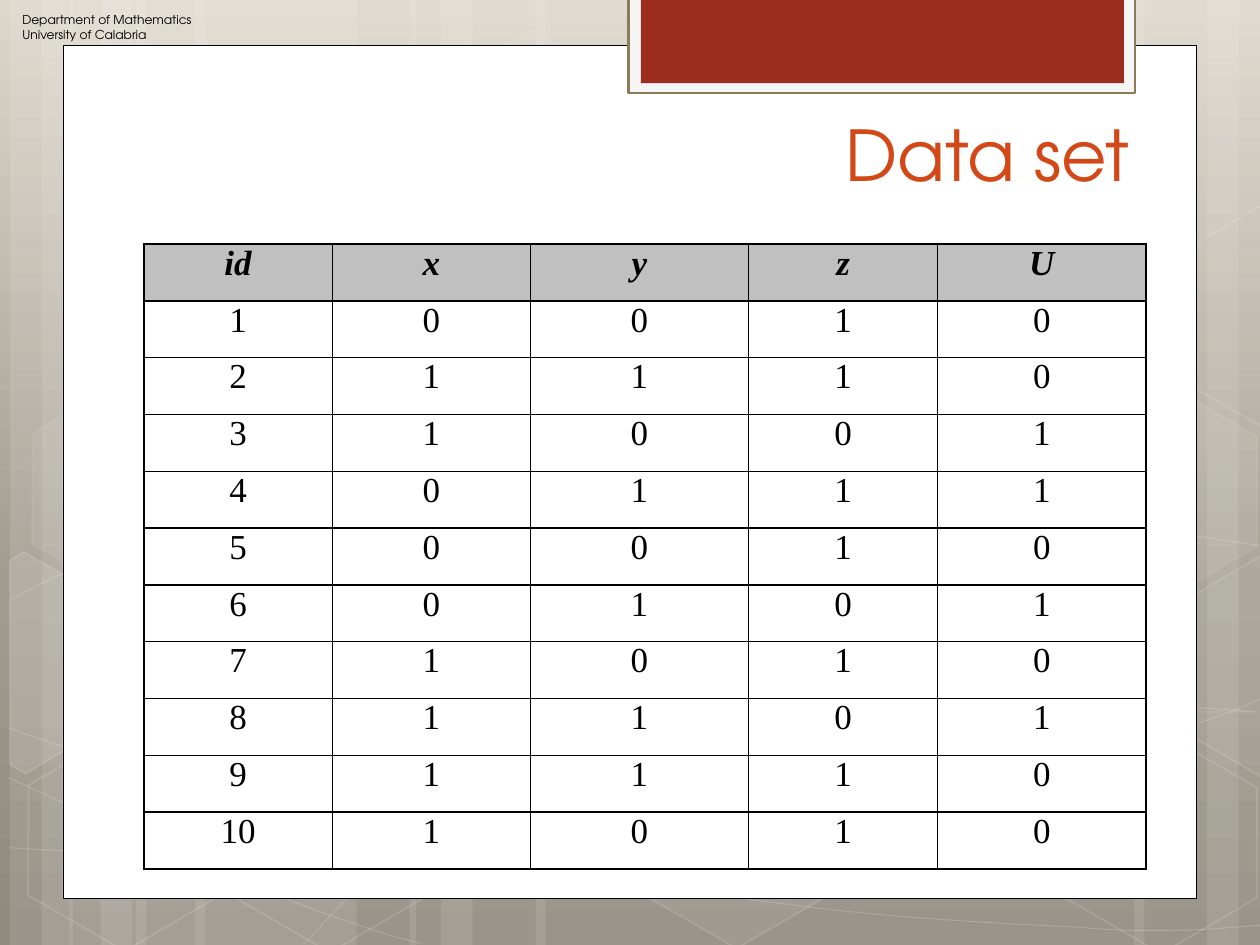
"""Build the data set slide: hexagon backdrop, white card and observation table."""
import math
from dataclasses import dataclass
from typing import NamedTuple, Optional

from lxml import etree
from pptx import Presentation
from pptx import util as u
from pptx.dml.color import RGBColor
from pptx.enum import shapes, text
from pptx.oxml import ns


@dataclass(frozen=True)
class Theme:
    white: str = "FFFFFF"
    black: str = "000000"
    frame: str = "F5F5F5"
    frame_line: str = "8B7B57"
    tab: str = "9B2D1F"
    title: str = "D34817"
    header: str = "C0C0C0"
    backdrop: tuple = ((0, "DDD7CB"), (62, "A29C90"), (100, "8F8A7D"))
    sans: str = "TeX Gyre Adventor"
    serif: str = "Times New Roman"
    title_pt: int = 40
    table_pt: int = 20
    label_pt: int = 7


class Paint(NamedTuple):
    color: str
    alpha: int = 100
    width: float = 1


class Box(NamedTuple):
    left: float
    top: float
    width: float
    height: float


class Stripe(NamedTuple):
    left: float
    width: float
    rotation: int = 0


class Hexagon(NamedTuple):
    left: float
    top: float
    fill: Optional[int]
    line: int


class CutHexagon(NamedTuple):
    points: list
    fill: Optional[int] = None


T = Theme()
PAGE_W, PAGE_H = 25.4, 19.05
TILT = 30
STRIPES = [
    Stripe(2.74, 4.45), Stripe(0.2, 1.27), Stripe(0.84, 2.11), Stripe(3.94, 4.45),
    Stripe(1.4, 1.27), Stripe(2.03, 2.11), Stripe(18.62, 4.45, 180), Stripe(24.33, 1.27, 180),
    Stripe(22.86, 2.11, 180), Stripe(10.8, 7.82), Stripe(8.26, 1.27), Stripe(8.89, 2.11),
]
CURVES = [
    [(0.18, 17.09), (1.55, 17.17), (2.92, 17.25), (4.83, 17.22), (6.73, 17.2), (9.09, 17.15),
     (11.63, 16.89), (14.17, 16.64), (17.78, 16.15), (20.12, 15.67), (22.43, 15.19),
     (24.82, 14.43), (25.58, 14)],
    [(0.18, 12.12), (0.91, 11.71), (1.65, 11.33), (3.07, 10.95), (4.52, 10.57), (6.58, 10.01),
     (8.81, 9.83), (11.07, 9.65), (13.82, 9.63), (16.61, 9.83), (19.41, 10.03),
     (24.05, 10.82), (25.58, 11.02)],
    [(0.15, 15.67), (3.23, 17.07), (6.27, 18.47), (8.48, 19.02)],
    [(0.18, 14.68), (0.97, 14.96), (1.78, 15.24), (3.25, 15.65), (4.72, 16.03), (6.93, 16.66),
     (9.07, 17.09), (11.18, 17.53), (13.84, 17.98), (15.95, 18.24), (18.06, 18.52),
     (20.32, 18.62), (21.67, 18.69), (22.99, 18.8), (23.34, 18.75), (24, 18.75),
     (24.66, 18.72), (25.12, 18.67), (25.58, 18.64)],
    [(6.15, 19.02), (6.6, 18.52), (7.06, 18.01), (7.67, 17.55), (8.28, 17.09), (9.14, 16.59),
     (9.86, 16.23), (10.57, 15.88), (11, 15.72), (11.94, 15.47), (12.85, 15.21),
     (14.55, 14.86), (15.44, 14.68), (16.36, 14.5), (16.48, 14.5), (17.27, 14.45),
     (18.06, 14.38), (19.3, 14.3), (20.17, 14.27), (21.06, 14.25), (22.5, 14.27),
     (22.5, 14.27), (22.5, 14.27), (24.21, 14.27), (24.21, 14.27), (24.66, 14.3),
     (25.1, 14.33), (25.32, 14.35), (25.55, 14.38)],
]
HEXAGONS = [
    Hexagon(8.48, 0.91, 4, 8), Hexagon(12.62, 14.96, 6, 12),
    CutHexagon([(0.2, 11.3), (0.48, 11.13), (2.44, 12.24), (2.41, 14.48), (0.51, 15.6),
                (0.2, 15.42)], 10),
    Hexagon(0.28, 15.01, None, 12), Hexagon(0.36, 7.92, 7, 8), Hexagon(4.42, 15.04, None, 12),
    Hexagon(19.13, 11.51, 10, 12), Hexagon(21.18, 15.06, None, 12), Hexagon(21.18, 7.98, 7, 8),
    CutHexagon([(23.52, 12.32), (25.43, 11.2), (25.63, 11.33), (25.63, 15.57), (25.45, 15.67),
                (23.52, 14.55)], 4),
    CutHexagon([(23.52, 5.26), (25.43, 4.14), (25.65, 4.27), (25.63, 8.51), (25.45, 8.61),
                (23.52, 7.49)]),
]
COLUMNS = {"id": 3.8, "x": 3.99, "y": 4.4, "z": 3.81, "U": 4.2}
OBSERVATIONS = ["0010", "1110", "1001", "0111", "0010", "0101", "1010", "1101", "1110", "1010"]


def apply_paint(fmt, paint: Optional[Paint], colors) -> None:
    """Fill a format solidly, or empty it, and set its opacity."""
    if paint is None:
        fmt.background()
        return
    fmt.solid()
    fmt.fore_color.rgb = RGBColor.from_string(paint.color)
    if paint.alpha < 100:
        etree.SubElement(colors()[0], ns.qn("a:alpha"), val=str(paint.alpha * 1000))


def style_shape(sp, fill: Optional[Paint], line: Optional[Paint] = None) -> None:
    """Give a shape its fill and line, without a shadow."""
    sp.shadow.inherit = False
    props = sp._element.spPr
    apply_paint(sp.fill, fill, lambda: props.xpath("./a:solidFill/a:srgbClr"))
    apply_paint(sp.line.fill, line, lambda: props.xpath("./a:ln/a:solidFill/a:srgbClr"))
    if line:
        sp.line.width = u.Pt(line.width)


def add_preset(parent, kind, box: Box, fill: Optional[Paint], line: Optional[Paint] = None):
    """Add a preset shape in a box given in centimetres."""
    sp = parent.shapes.add_shape(kind, *map(u.Cm, box))
    style_shape(sp, fill, line)
    return sp


def add_outline(parent, points: list, closed: bool):
    """Add a freeform through points given in centimetres."""
    start, *rest = [(x * 100, y * 100) for x, y in points]
    builder = parent.shapes.build_freeform(*start, scale=u.Cm(0.01))
    builder.add_line_segments(rest, close=closed)
    return builder.convert_to_shape()


def add_curve(parent, points: list) -> None:
    """Add a faint line of cubic Bezier segments."""
    sp = add_outline(parent, points, False)
    track = sp._element.xpath(".//a:pathLst/*")[0]
    steps = list(track)[1:]
    for i in range(0, len(steps), 3):
        bezier = etree.SubElement(track, ns.qn("a:cubicBezTo"))
        for step in steps[i:i + 3]:
            bezier.append(step[0])
            track.remove(step)
    style_shape(sp, None, Paint(T.white, 20, 0.5))


def turn(x: float, y: float, degrees: float) -> tuple:
    """Rotate a point clockwise about the page corner."""
    a = math.radians(degrees)
    return x * math.cos(a) - y * math.sin(a), x * math.sin(a) + y * math.cos(a)


def add_cut_hexagon(parent, cut: CutHexagon) -> None:
    """Add a tilted hexagon that the page edge cuts off."""
    sp = add_outline(parent, [turn(x, y, -TILT) for x, y in cut.points], True)
    x, y = turn(sp.left + sp.width / 2, sp.top + sp.height / 2, TILT)
    sp.left, sp.top = int(x - sp.width / 2), int(y - sp.height / 2)
    sp.rotation = TILT
    style_shape(sp, Paint(T.white, cut.fill) if cut.fill else None, Paint(T.white, 12))


def add_hexagon(parent, h: Hexagon) -> None:
    """Add a whole tilted hexagon."""
    sp = add_preset(parent, shapes.MSO_SHAPE.HEXAGON, Box(h.left, h.top, 4.45, 3.86),
                    Paint(T.white, h.fill) if h.fill else None, Paint(T.white, h.line))
    sp.adjustments[0] = 0.285
    sp.rotation = TILT


def format_runs(p, font: str, size: int, color: str, strong: bool = False) -> None:
    """Format every run of a paragraph."""
    for r in p.runs:
        r.font.name, r.font.size = font, u.Pt(size)
        r.font.bold = r.font.italic = strong
        r.font.color.rgb = RGBColor.from_string(color)


def add_backdrop(s) -> None:
    """Draw the gradient, stripes, curves and hexagons."""
    fill = s.background.fill
    fill.gradient()
    fill.gradient_angle = 270
    stops = s._element.xpath(".//p:bg//a:gsLst")[0]
    stops[:] = []
    for pos, color in T.backdrop:
        stop = etree.SubElement(stops, ns.qn("a:gs"), pos=str(pos * 1000))
        etree.SubElement(stop, ns.qn("a:srgbClr"), val=color)
    group = s.shapes.add_group_shape()
    for left, width, rotation in STRIPES:
        sp = add_preset(group, shapes.MSO_SHAPE.RECTANGLE, Box(left, 0, width, PAGE_H),
                        Paint(T.white, 10))
        sp.rotation = rotation
    for curve in CURVES:
        add_curve(group, curve)
    for h in HEXAGONS:
        (add_hexagon if isinstance(h, Hexagon) else add_cut_hexagon)(group, h)


def add_card(s) -> None:
    """Draw the white card, its red tab and the department label."""
    rect = shapes.MSO_SHAPE.RECTANGLE
    add_preset(s, rect, Box(1.27, 0.91, 22.86, 17.2), Paint(T.white), Paint(T.black, width=0.5))
    add_preset(s, rect, Box(12.67, -0.05, 10.21, 1.93), Paint(T.frame),
               Paint(T.frame_line, width=1.25))
    add_preset(s, rect, Box(12.92, -0.05, 9.74, 1.73), Paint(T.tab))
    tf = s.shapes.add_textbox(*map(u.Cm, Box(0.2, 0.13, 5.59, 0.86))).text_frame
    tf.word_wrap = True
    tf.auto_size = text.MSO_AUTO_SIZE.SHAPE_TO_FIT_TEXT
    tf.text = "Department of Mathematics\nUniversity of Calabria"
    for p in tf.paragraphs:
        format_runs(p, T.sans, T.label_pt, T.black)


def set_title(s) -> None:
    """Place the title placeholder in front of the card."""
    sp = s.shapes.title
    s.shapes._spTree.append(sp._element)
    sp.left, sp.top, sp.width, sp.height = map(u.Cm, Box(3.51, 2.13, 19.51, 3.18))
    tf = sp.text_frame
    tf.text = "Data set"
    tf.auto_size = text.MSO_AUTO_SIZE.NONE
    tf.vertical_anchor = text.MSO_ANCHOR.TOP
    tf.paragraphs[0].alignment = text.PP_ALIGN.RIGHT
    format_runs(tf.paragraphs[0], T.sans, T.title_pt, T.title)


def fill_cell(cell, value: str, header: bool) -> None:
    """Write one table cell with its fill and borders."""
    cell.text = value
    cell.margin_left = cell.margin_right = u.Cm(0.18)
    cell.margin_top = cell.margin_bottom = 0
    p = cell.text_frame.paragraphs[0]
    p.alignment = text.PP_ALIGN.CENTER
    format_runs(p, T.serif, T.table_pt, T.black, header)
    apply_paint(cell.fill, Paint(T.header) if header else None, list)
    props = cell._tc.get_or_add_tcPr()
    for i, side in enumerate(("lnL", "lnR", "lnT", "lnB")):
        ln = etree.Element(ns.qn(f"a:{side}"), w=str(u.Pt(1)))
        solid = etree.SubElement(ln, ns.qn("a:solidFill"))
        etree.SubElement(solid, ns.qn("a:srgbClr"), val=T.black)
        props.insert(i, ln)


def add_observations(s) -> None:
    """Add the table of numbered observations."""
    rows = [list(COLUMNS)] + [[str(n), *bits] for n, bits in enumerate(OBSERVATIONS, 1)]
    box = Box(2.9, 4.92, sum(COLUMNS.values()), 12.6)
    table = s.shapes.add_table(len(rows), len(COLUMNS), *map(u.Cm, box)).table
    table.first_row = table.horz_banding = False
    for column, width in zip(table.columns, COLUMNS.values()):
        column.width = u.Cm(width)
    for i, values in enumerate(rows):
        for j, value in enumerate(values):
            fill_cell(table.cell(i, j), value, i == 0)


def main() -> None:
    """Build and save the slide."""
    prs = Presentation()
    prs.slide_width, prs.slide_height = u.Cm(PAGE_W), u.Cm(PAGE_H)
    s = prs.slides.add_slide(prs.slide_layouts[5])
    add_backdrop(s)
    add_card(s)
    set_title(s)
    add_observations(s)
    prs.save("out.pptx")


if __name__ == "__main__":
    main()
